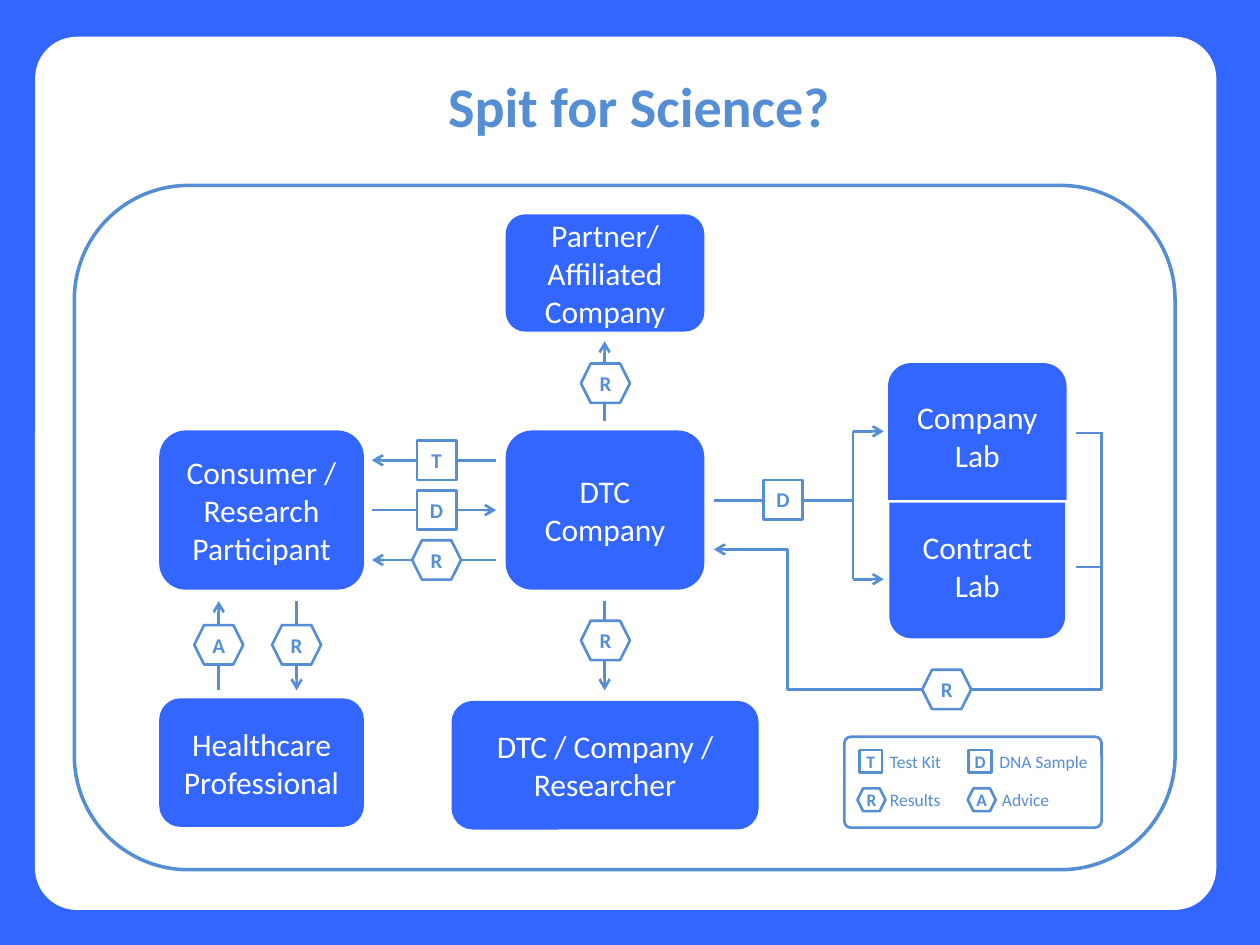
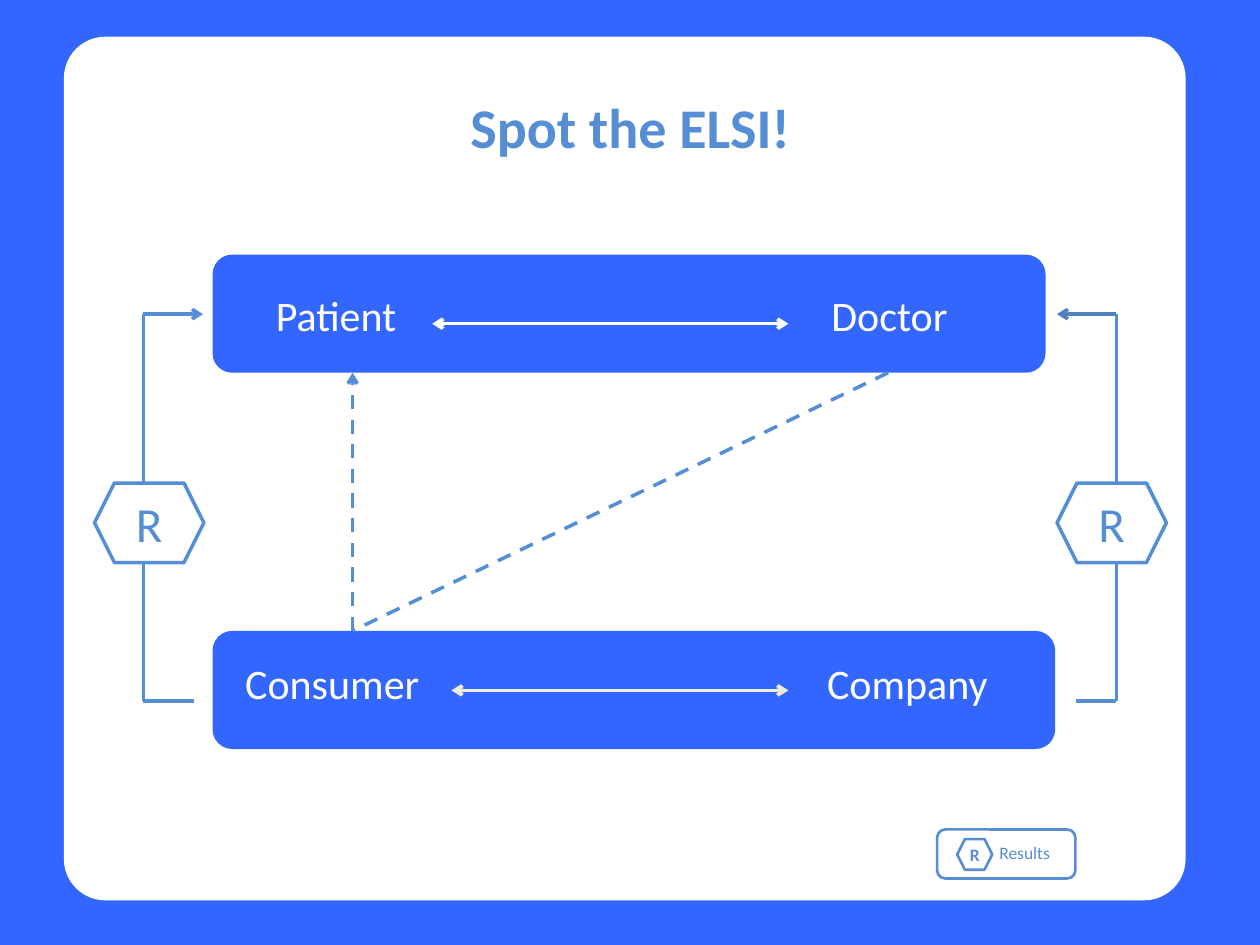
from lxml import etree
from pptx import Presentation
from pptx import util as u
from pptx.dml.color import RGBColor
from pptx.enum import dml, shapes, text
from pptx.oxml import ns

COLORS = {"blue": "3366FF", "steel": "558ED5", "white": "FFFFFF",
          "cream": "EEECE1", "slate": "4F81BD"}
RGB = {name: RGBColor.from_string(value) for name, value in COLORS.items()}
ROUND = shapes.MSO_SHAPE.ROUNDED_RECTANGLE
HALF_ROUND = shapes.MSO_SHAPE.ROUND_2_SAME_RECTANGLE
HEX = shapes.MSO_SHAPE.HEXAGON
RECT = shapes.MSO_SHAPE.RECTANGLE
PANEL_ADJ = 0.048
BLOCK = {"fill": "blue", "ink": "white"}
BADGE = {"fill": "white", "edge": "steel", "size": 12, "bold": True, "inset": 0, "wrap": False}
MARK = {**BADGE, "size": 10}
LABEL = {"size": 10, "align": "LEFT", "anchor": "TOP"}
NAME = {"size": 24, "ink": "white", "align": "LEFT", "anchor": "TOP"}


def put(parent, kind, box, words="", fill=None, edge=None, weight=1.5, adj=None, size=18,
        ink="steel", bold=False, inset=None, wrap=True, align="CENTER", anchor="MIDDLE"):
    """Add a preset shape, or a text box when kind is None; box is in points."""
    box = [u.Pt(v) for v in box]
    if kind is None:
        sp = parent.add_textbox(*box)
    else:
        sp = parent.add_shape(kind, *box)
        sp.shadow.inherit = False
        if fill:
            sp.fill.solid()
            sp.fill.fore_color.rgb = RGB[fill]
        else:
            sp.fill.background()
        if edge:
            sp.line.color.rgb = RGB[edge]
            sp.line.width = u.Pt(weight)
        else:
            sp.line.fill.background()
        if adj is not None:
            sp.adjustments[0] = adj
    if words:
        tf = sp.text_frame
        tf.word_wrap = wrap
        tf.vertical_anchor = text.MSO_ANCHOR[anchor]
        if inset is not None:
            for side in ("left", "top", "right", "bottom"):
                setattr(tf, f"margin_{side}", u.Pt(inset))
        p = tf.paragraphs[0]
        p.alignment = text.PP_ALIGN[align]
        r = p.add_run()
        r.text = words
        for key, value in {"name": "Calibri", "size": u.Pt(size), "bold": bold}.items():
            setattr(r.font, key, value)
        r.font.color.rgb = RGB[ink]
    return sp


def link(parent, x1, y1, x2, y2, ends=(), color="steel", weight=1.5, dash=False, bend=None):
    """Draw a line; ends names its arrowheads, bend is the elbow's share of the way."""
    kind = shapes.MSO_CONNECTOR.STRAIGHT if bend is None else shapes.MSO_CONNECTOR.ELBOW
    c = parent.add_connector(kind, *[u.Pt(v) for v in (x1, y1, x2, y2)])
    c.line.color.rgb = RGB[color]
    c.line.width = u.Pt(weight)
    if dash:
        c.line.dash_style = dml.MSO_LINE.DASH
    spPr = c.element.spPr
    for end in ends:
        etree.SubElement(spPr.find(ns.qn("a:ln")), ns.qn(f"a:{end}"), type="arrow")
    etree.SubElement(spPr, ns.qn("a:effectLst"))
    if bend is not None:
        guides = spPr.find(ns.qn("a:prstGeom")).find(ns.qn("a:avLst"))
        etree.SubElement(guides, ns.qn("a:gd"), name="adj1", fmla=f"val {round(bend * 100000)}")


TO = ("tailEnd",)
BOTH = ("headEnd", "tailEnd")

prs = Presentation()
prs.slide_width, prs.slide_height = u.Pt(720), u.Pt(540)
background = prs.slide_master.background.fill
background.solid()
background.fore_color.rgb = RGB["blue"]

# Both slides: white panel behind a centred title
slides = []
for words, title_box, panel_box in (
        ("Spit for Science?", (70.5, 37.5, 589.5, 46), (20, 21, 675, 499)),
        ("Spot the ELSI!", (105, 49, 510.5, 46), (36.5, 21, 641, 493.5))):
    s = prs.slides.add_slide(prs.slide_layouts[5])
    panel = put(s.shapes, ROUND, panel_box, fill="white", adj=PANEL_ADJ)
    s.shapes.element.insert(2, panel.element)
    title = s.shapes.title
    for key, value in zip(("left", "top", "width", "height"), title_box):
        setattr(title, key, u.Pt(value))
    tf = title.text_frame
    tf.text = words
    tf.auto_size = text.MSO_AUTO_SIZE.NONE
    tf.vertical_anchor = text.MSO_ANCHOR.TOP
    p = tf.paragraphs[0]
    p.alignment = text.PP_ALIGN.CENTER
    for key, value in {"name": "Calibri", "size": u.Pt(32), "bold": True}.items():
        setattr(p.runs[0].font, key, value)
    p.runs[0].font.color.rgb = RGB["steel"]
    slides.append(s.shapes)
science, elsi = slides

# Slide 1: who exchanges what
put(science, ROUND, (42.5, 106, 629, 391), edge="steel", weight=2)
for words, box in (
        ("Consumer / Research Participant", (91, 246, 117, 91)),
        ("DTC Company", (289, 246, 113.5, 91)),
        ("Partner/ Affiliated Company", (289, 122.5, 113.5, 67)),
        ("Healthcare Professional", (91, 399, 117, 73.5)),
        ("DTC / Company / Researcher", (258, 400.5, 175.5, 73.5))):
    put(science, ROUND, box, words, **BLOCK)

put(science, HALF_ROUND, (507.5, 207.5, 102, 79), "Company Lab", **BLOCK)
contract_lab = put(science, HALF_ROUND, (507.5, 286.5, 102, 79), fill="blue", edge="white")
contract_lab.element.spPr.find(ns.qn("a:xfrm")).set("flipV", "1")
put(science, None, (516, 298, 85, 51), "Contract Lab", ink="white", anchor="TOP")

for x1, y1, x2, y2, ends in (
        (283.5, 263, 212.5, 263, TO),
        (212.5, 291.5, 283.5, 291.5, TO),
        (283.5, 320, 212.5, 320, TO),
        (169.5, 343.5, 169.5, 394.5, TO),
        (125, 394.5, 125, 343.5, TO),
        (345.5, 240.5, 345.5, 195, TO),
        (345.5, 343.5, 345.5, 394.5, TO),
        (408, 286, 487.5, 286, ()),
        (487.5, 246.5, 487.5, 331, ()),
        (487.5, 246.5, 505, 246.5, TO),
        (487.5, 331, 505, 331, TO),
        (615, 247.5, 629.5, 247.5, ()),
        (615, 324, 629.5, 324, ()),
        (629.5, 247, 629.5, 394, ())):
    link(science, x1, y1, x2, y2, ends)
link(science, 629.5, 394, 408, 314, TO, bend=0.81)

for letter, x, y in (
        ("T", 249.5, 263), ("D", 249.5, 291.5), ("R", 249.5, 320), ("A", 125, 368.5),
        ("R", 169.5, 368.5), ("R", 346, 219), ("R", 346, 366), ("D", 447.5, 285.5),
        ("R", 541, 394)):
    kind, w = (RECT, 22.5) if letter in "TD" else (HEX, 28)
    put(science, kind, (x - w / 2, y - 11.25, w, 22.5), letter, **BADGE)

legend = science.add_group_shape().shapes
put(legend, ROUND, (482.5, 421, 147, 52), fill="white", edge="steel", adj=0.072)
for letter, words, x, y, label_x in (
        ("T", "Test Kit", 497.5, 435, 501.5), ("D", "DNA Sample", 560, 435, 564),
        ("R", "Results", 498, 457, 501.5), ("A", "Advice", 561, 457, 565.5)):
    kind, w = (RECT, 13) if letter in "TD" else (HEX, 16)
    put(legend, kind, (x - w / 2, y - 6.5, w, 13), letter, **MARK)
    put(legend, None, (label_x, y - 9.5, 66, 19.5), words, **LABEL)

# Slide 2: patient and doctor above, consumer and company below
for box in ((121.5, 145.5, 476, 67.5), (121.5, 360.5, 481.5, 67.5)):
    put(elsi, ROUND, box, **BLOCK)
for words, x, y in (("Patient", 150.5, 162), ("Doctor", 468, 162),
                    ("Consumer", 133, 372), ("Company", 465.5, 372)):
    put(elsi, None, (x, y, 120, 36), words, **NAME)
link(elsi, 247, 185, 450.5, 185, BOTH, "white", 2)
link(elsi, 258, 394.5, 450.5, 394.5, BOTH, "cream", 2)
link(elsi, 507.5, 213, 201.5, 360.5, weight=2, dash=True)
link(elsi, 201.5, 360.5, 201.5, 213, TO, weight=2, dash=True)

for x, arrow_x, foot_x, hex_x, arrow_color in ((82, 116, 111, 54, "steel"),
                                               (638, 604, 615, 604, "slate")):
    link(elsi, x, 179.5, arrow_x, 179.5, TO, arrow_color, 2)
    link(elsi, x, 179.5, x, 276, weight=2)
    link(elsi, x, 321, x, 400.5, weight=2)
    link(elsi, foot_x, 400.5, x, 400.5, weight=2)
    put(elsi, HEX, (hex_x, 276, 62.5, 45.5), "R", edge="steel", weight=2, size=28,
        inset=0, wrap=False)

put(elsi, ROUND, (535.5, 474, 79, 28), edge="steel")
put(elsi, HEX, (547, 479.5, 20, 17.5), "R", **MARK)
put(elsi, None, (564, 477.5, 73.5, 19.5), "Results", **LABEL)

prs.save("out.pptx")
